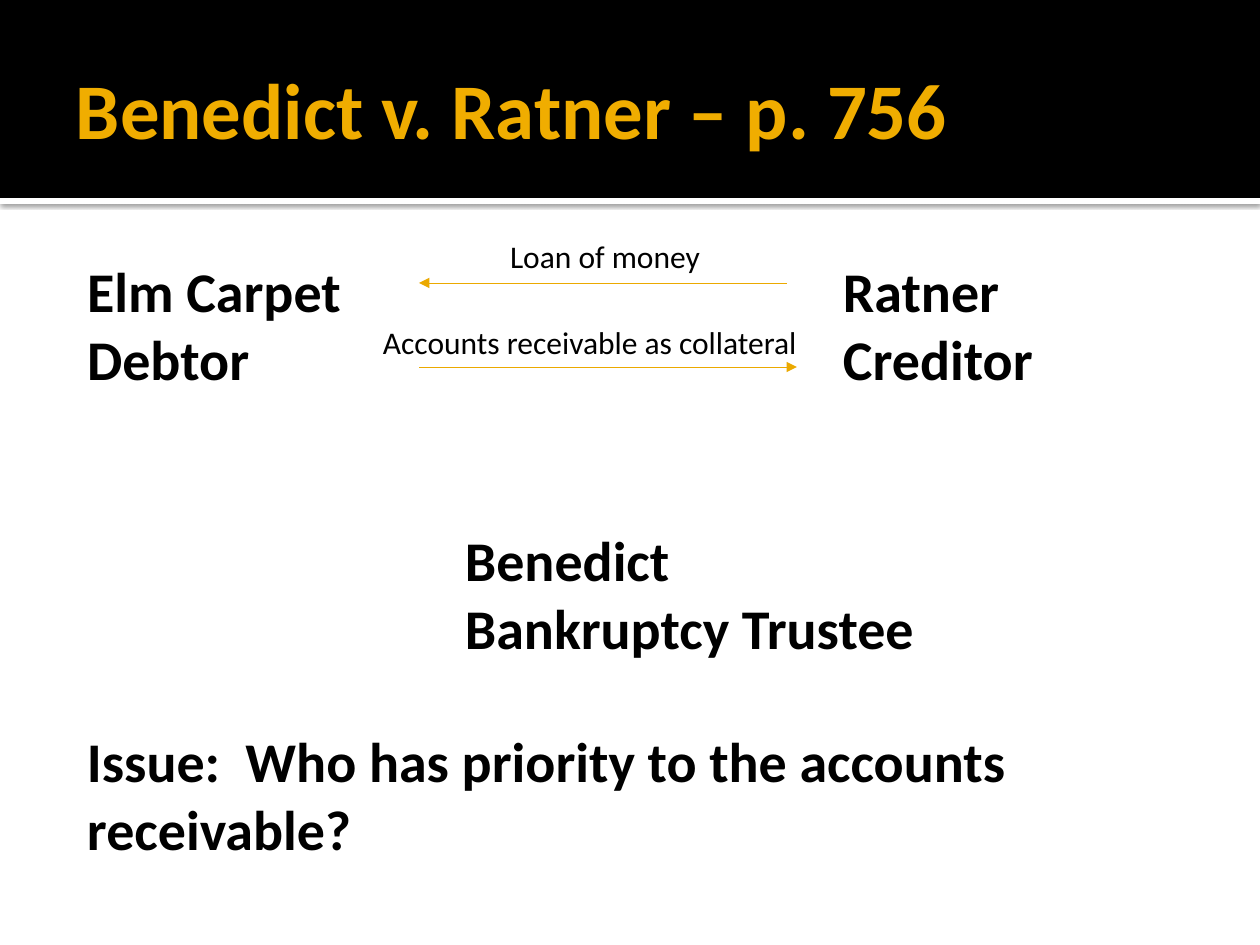
from lxml.etree import SubElement
from pptx import Presentation
from pptx.dml.color import RGBColor
from pptx.enum.shapes import MSO_CONNECTOR, MSO_SHAPE
from pptx.enum.text import MSO_ANCHOR, MSO_AUTO_SIZE, PP_ALIGN
from pptx.oxml.ns import qn
from pptx.util import Emu, Pt

FONT = "Calibri"
BLACK, WHITE, GOLD, AMBER = "000000", "FFFFFF", "F0AD00", "EBA900"
LINE_PT = 38.4
LINE_PX = 67.2


def px(n):
    """Turn pixels into EMU."""
    return Emu(round(n * 914400 / 126))


def color(value):
    """Turn a hex string into a colour."""
    return RGBColor.from_string(value)


def add_text(p, text, size=18, bold=False, fill=BLACK, align=PP_ALIGN.LEFT):
    """Write one formatted run into a paragraph."""
    p.alignment = align
    r = p.add_run()
    r.text = text
    r.font.name, r.font.size, r.font.bold = FONT, Pt(size), bold
    r.font.color.rgb = color(fill)


def set_frame(sp, insets, wrap=True):
    """Set the insets and wrapping of a shape and return its text frame."""
    tf = sp.text_frame
    tf.word_wrap = wrap
    tf.margin_left, tf.margin_top, tf.margin_right, tf.margin_bottom = map(px, insets)
    return tf


def add_band(s, box, fill):
    """Add a plain filled band."""
    sp = s.shapes.add_shape(MSO_SHAPE.RECTANGLE, *map(px, box))
    sp.shadow.inherit = False
    sp.fill.solid()
    sp.fill.fore_color.rgb = color(fill)
    sp.line.fill.background()
    return sp


def add_shadow(sp):
    """Give a shape a soft shadow below it."""
    effects = sp._element.spPr.find(qn("a:effectLst"))
    shadow = SubElement(effects, qn("a:outerShdw"), blurRad=str(Pt(2.5)),
                        dist=str(Pt(0.8)), dir="5400000", algn="tl", rotWithShape="0")
    rgb = SubElement(shadow, qn("a:srgbClr"), val=BLACK)
    SubElement(rgb, qn("a:alpha"), val="60000")


def add_header(s, box, text):
    """Build the black header with its shadowed rule and the title."""
    x, y, w, h = box
    add_shadow(add_band(s, (x, y + h, w, 6), WHITE))
    add_band(s, box, BLACK)
    title = s.shapes.title
    title.left, title.top, title.width, title.height = map(px, (x + 63, y + 22, w - 126, h - 25))
    s.shapes._spTree.append(title._element)
    tf = set_frame(title, (13, 6, 6, 6))
    tf.vertical_anchor = MSO_ANCHOR.MIDDLE
    add_text(tf.paragraphs[0], text, size=45, bold=True, fill=GOLD)


def add_block(s, box, lines):
    """Add a block of bold lines."""
    tf = set_frame(s.shapes.add_textbox(*map(px, box)), (24, 13, 13, 6))
    for i, text in enumerate(lines):
        p = tf.add_paragraph() if i else tf.paragraphs[0]
        p.line_spacing = Pt(LINE_PT)
        add_text(p, text, size=32, bold=True)


def add_body(s, box):
    """Place the parties and the issue on a grid of text lines."""
    x, y, w, h = box
    blocks = [
        (0, 0, 307, ("Elm Carpet", "Debtor")),
        (756, 0, w - 756, ("Ratner", "Creditor")),
        (378, 4, w - 378, ("Benedict", "Bankruptcy Trustee")),
        (0, 6 + 1, w, ("Issue:  Who has priority to the accounts receivable?",)),
    ]
    for dx, row, width, lines in blocks:
        add_block(s, (x + dx, y + round(row * LINE_PX), width, 154), lines)


def add_arrow(s, tip, end, y):
    """Add a level arrow that points at tip."""
    c = s.shapes.add_connector(MSO_CONNECTOR.STRAIGHT, px(tip), px(y), px(end), px(y))
    c.line.color.rgb = color(AMBER)
    c.line.width = Pt(0.5)
    SubElement(c.line._get_or_add_ln(), qn("a:headEnd"), type="triangle")
    SubElement(c._element.spPr, qn("a:effectLst"))


def add_label(s, box, text, wrap):
    """Add the caption of an arrow."""
    tf = set_frame(s.shapes.add_textbox(*map(px, box)), (13, 6, 13, 6), wrap)
    tf.auto_size = MSO_AUTO_SIZE.SHAPE_TO_FIT_TEXT
    add_text(tf.paragraphs[0], text)


def add_exchange(s, box):
    """Build the two arrows between debtor and creditor with their captions."""
    x, y, w, h = box
    add_arrow(s, x + 49, x + 417, y + 52)
    add_arrow(s, x + 427, x + 49, y + 136)
    add_label(s, (x + 127, y, 223, 50), "Loan of money", False)
    add_label(s, (x, y + h - 50, w, 50), "Accounts receivable as collateral", True)


def main():
    """Build and save the slide."""
    prs = Presentation()
    prs.slide_width, prs.slide_height = px(1260), px(945)
    s = prs.slides.add_slide(prs.slide_layouts[5])
    add_header(s, (0, 0, 1260, 198), "Benedict v. Ratner – p. 756")
    add_body(s, (63, 244, 1134, 636))
    add_exchange(s, (370, 231, 466, 136))
    prs.save("out.pptx")


if __name__ == "__main__":
    main()
